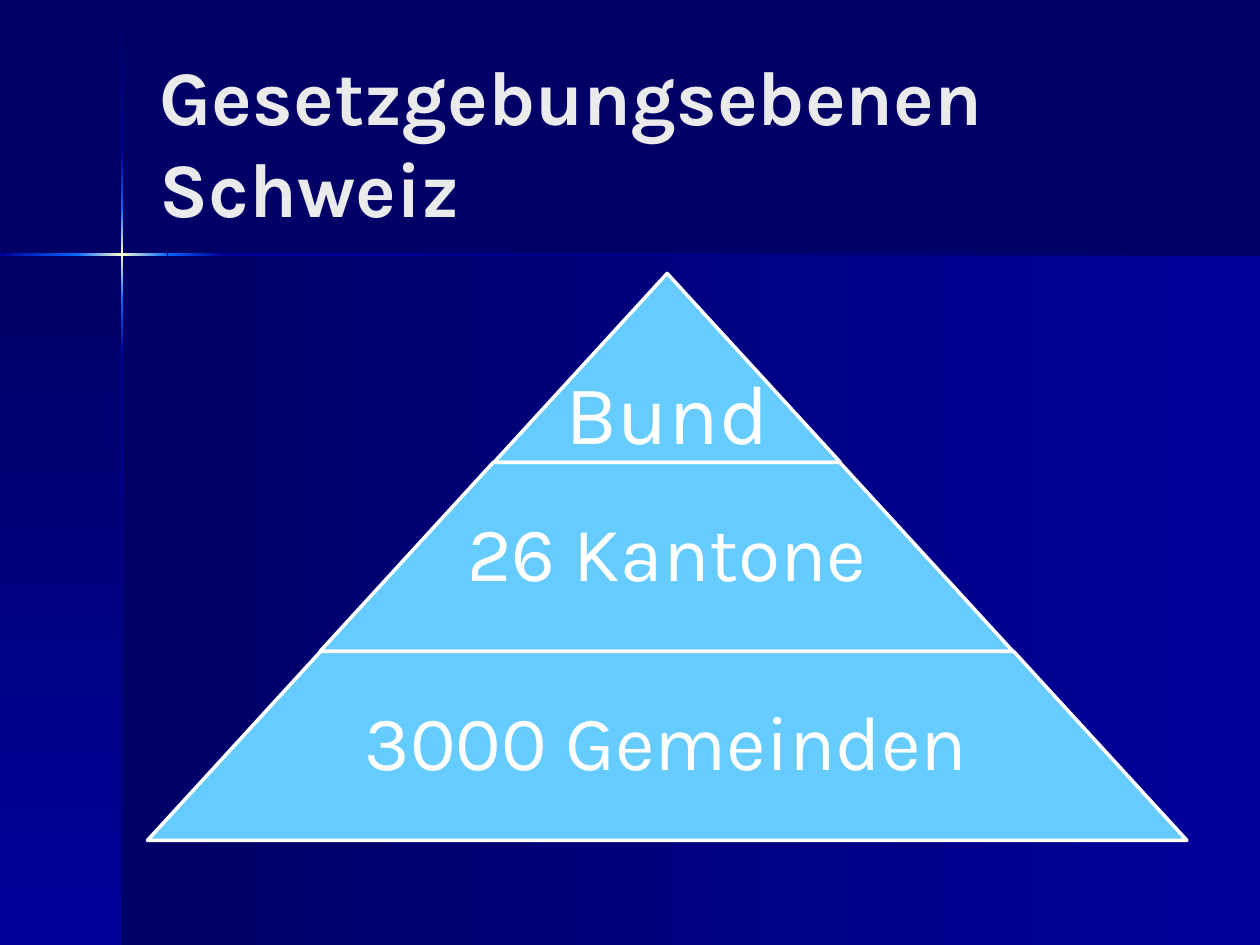
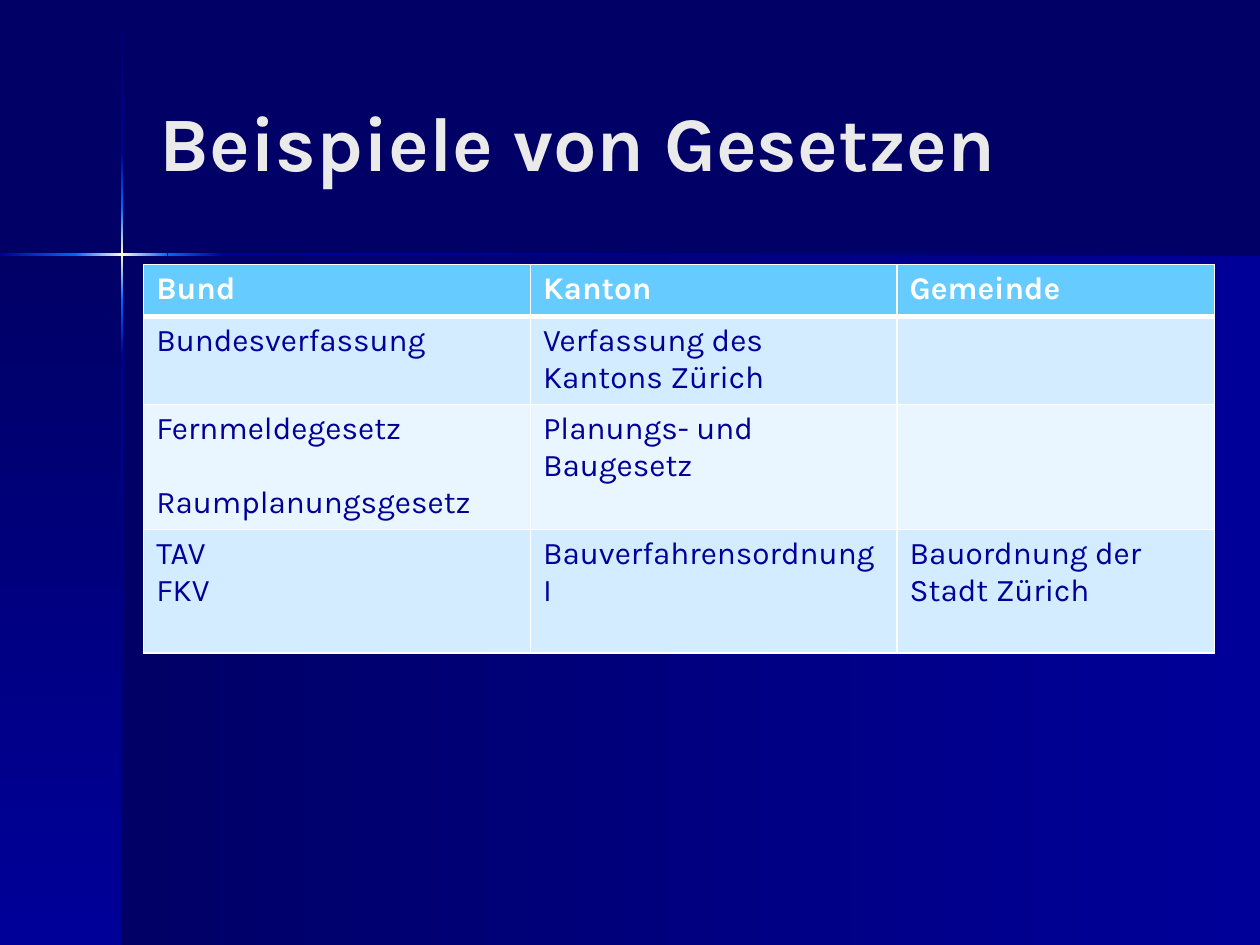
from dataclasses import dataclass
from typing import NamedTuple

from lxml import etree
from pptx import Presentation
from pptx import util as u
from pptx.dml.color import RGBColor
from pptx.enum import shapes, text
from pptx.oxml.ns import qn

PX = 9144  # EMU per px, 100 px to the inch


@dataclass(frozen=True)
class Theme:
    font: str = "Karla"
    dark: str = "000066"
    navy: str = "000099"
    blue: str = "0066FF"
    glow: str = "FFFFCC"
    sky: str = "66CCFF"
    band: str = "D3ECFF"
    pale: str = "EAF6FF"
    white: str = "FFFFFF"
    title: str = "EAEAEA"
    head_pt: int = 44
    top_pt: int = 48
    tier_pt: int = 44
    cell_pt: int = 18


T = Theme()


class Box(NamedTuple):
    x: int
    y: int
    w: int
    h: int

    def emu(self) -> list[int]:
        return [n * PX for n in self]


class Beam(NamedTuple):
    box: Box
    stops: tuple[str, ...]
    down: bool = False


class Tier(NamedTuple):
    label: str
    size: int
    inset: int
    anchor: text.MSO_ANCHOR


FADE = (T.dark, T.navy)
RISE = (T.navy, T.blue)
STAR = (T.blue, T.glow, T.blue)
BEAMS = [
    Beam(Box(97, 202, 903, 548), FADE),
    Beam(Box(0, 202, 97, 548), FADE, True),
    Beam(Box(96, 1, 2, 120), FADE, True),
    Beam(Box(96, 282, 2, 468), FADE[::-1], True),
    Beam(Box(177, 201, 823, 2), FADE[::-1]),
    Beam(Box(96, 238, 2, 44), RISE[::-1], True),
    Beam(Box(96, 121, 2, 44), RISE, True),
    Beam(Box(96, 165, 2, 73), STAR, True),
    Beam(Box(0, 201, 61, 2), RISE),
    Beam(Box(133, 201, 44, 2), RISE[::-1]),
    Beam(Box(60, 201, 73, 2), STAR),
]
TITLE = Box(117, 33, 825, 157)

AXIS, PEAK, STEP, TIER_H = 529, 217, 275, 150
TIERS = [
    Tier("Bund", T.top_pt, 0, text.MSO_ANCHOR.BOTTOM),
    Tier("26 Kantone", T.tier_pt, 6, text.MSO_ANCHOR.MIDDLE),
    Tier("3000 Gemeinden", T.tier_pt, 6, text.MSO_ANCHOR.MIDDLE),
]

GRID = Box(114, 210, 850, 305)
COLS = [307, 291, 252]
ROWS = [41, 68, 98, 98]
LAWS = [
    ["Bund", "Kanton", "Gemeinde"],
    ["Bundesverfassung", "Verfassung des Kantons Zürich", ""],
    ["Fernmeldegesetz\nRaumplanungsgesetz", "Planungs- und Baugesetz", ""],
    ["TAV\nFKV", "Bauverfahrensordnung I", "Bauordnung der Stadt Zürich"],
]
FILLS = [T.sky, T.band, T.pale, T.band]


def rgb(code: str) -> RGBColor:
    return RGBColor.from_string(code)


def style(frame, size: int, color: str, bold: bool = False) -> None:
    for par in frame.paragraphs:
        for run in par.runs:
            font = run.font
            font.name, font.size, font.bold = T.font, u.Pt(size), bold
            font.color.rgb = rgb(color)


def label(slide, box: Box, words: str, anchor: text.MSO_ANCHOR):
    """Add a wrapping text box and return its frame."""
    frame = slide.shapes.add_textbox(*box.emu()).text_frame
    frame.word_wrap = True
    frame.vertical_anchor = anchor
    frame.text = words
    return frame


def beam(slide, item: Beam) -> None:
    """Draw a rectangle with an evenly spaced colour gradient."""
    bar = slide.shapes.add_shape(shapes.MSO_SHAPE.RECTANGLE, *item.box.emu())
    bar.shadow.inherit = False
    bar.line.fill.background()
    bar.fill.gradient()
    bar.fill.gradient_angle = 270 if item.down else 0
    stops = bar._element.spPr.find(".//" + qn("a:gsLst"))
    for old in list(stops):
        stops.remove(old)
    for i, code in enumerate(item.stops):
        pos = 100000 * i // (len(item.stops) - 1)
        stop = etree.SubElement(stops, qn("a:gs"), pos=str(pos))
        etree.SubElement(stop, qn("a:srgbClr"), val=code)


def page(prs, title: str):
    """Add a slide with the light cross and a title."""
    slide = prs.slides.add_slide(prs.slide_layouts[6])
    for item in BEAMS:
        beam(slide, item)
    frame = label(slide, TITLE, title, text.MSO_ANCHOR.MIDDLE)
    style(frame, T.head_pt, T.title, True)
    return slide


def pyramid(slide) -> None:
    for i, tier in enumerate(TIERS):
        wide, top = STEP * (i + 1), PEAK + TIER_H * i
        box = Box(AXIS - wide // 2, top, wide, TIER_H)
        part = slide.shapes.add_shape(shapes.MSO_SHAPE.TRAPEZOID, *box.emu())
        part.shadow.inherit = False
        part.adjustments[0] = STEP / 2 / TIER_H
        part.fill.solid()
        part.fill.fore_color.rgb = rgb(T.sky)
        part.line.color.rgb = rgb(T.white)
        part.line.width = u.Pt(2)

        room = max(STEP, wide * 65 // 100)
        spot = Box(AXIS - room // 2, top, room, TIER_H)
        frame = label(slide, spot, tier.label, tier.anchor)
        frame.margin_left = frame.margin_right = tier.inset * PX
        frame.margin_top = frame.margin_bottom = tier.inset * PX
        par = frame.paragraphs[0]
        par.alignment = text.PP_ALIGN.CENTER
        par.line_spacing = 0.9
        style(frame, tier.size, T.white)


def border(cell, row: int) -> None:
    """Rule a cell in white, heavier between header and body."""
    props = cell._tc.get_or_add_tcPr()
    heavy = {0: "lnB", 1: "lnT"}.get(row)
    for side in ("lnL", "lnR", "lnT", "lnB"):
        width = u.Pt(3 if side == heavy else 1)
        line = etree.SubElement(props, qn("a:" + side), w=str(int(width)))
        fill = etree.SubElement(line, qn("a:solidFill"))
        etree.SubElement(fill, qn("a:srgbClr"), val=T.white)


def laws(slide) -> None:
    table = slide.shapes.add_table(len(ROWS), len(COLS), *GRID.emu()).table
    for col, wide in zip(table.columns, COLS):
        col.width = wide * PX
    for r, (row, high) in enumerate(zip(table.rows, ROWS)):
        row.height = high * PX
        for cell, words in zip(row.cells, LAWS[r]):
            border(cell, r)
            cell.fill.solid()
            cell.fill.fore_color.rgb = rgb(FILLS[r])
            cell.text_frame.text = words
            style(cell.text_frame, T.cell_pt, T.navy if r else T.white, r == 0)
    table.cell(2, 0).text_frame.paragraphs[1].space_before = u.Pt(21)


def main() -> None:
    prs = Presentation()
    prs.slide_width, prs.slide_height = 1000 * PX, 750 * PX
    back = prs.slide_master.background.fill
    back.solid()
    back.fore_color.rgb = rgb(T.dark)
    pyramid(page(prs, "Gesetzgebungsebenen Schweiz"))
    laws(page(prs, "Beispiele von Gesetzen"))
    prs.save("out.pptx")


if __name__ == "__main__":
    main()
